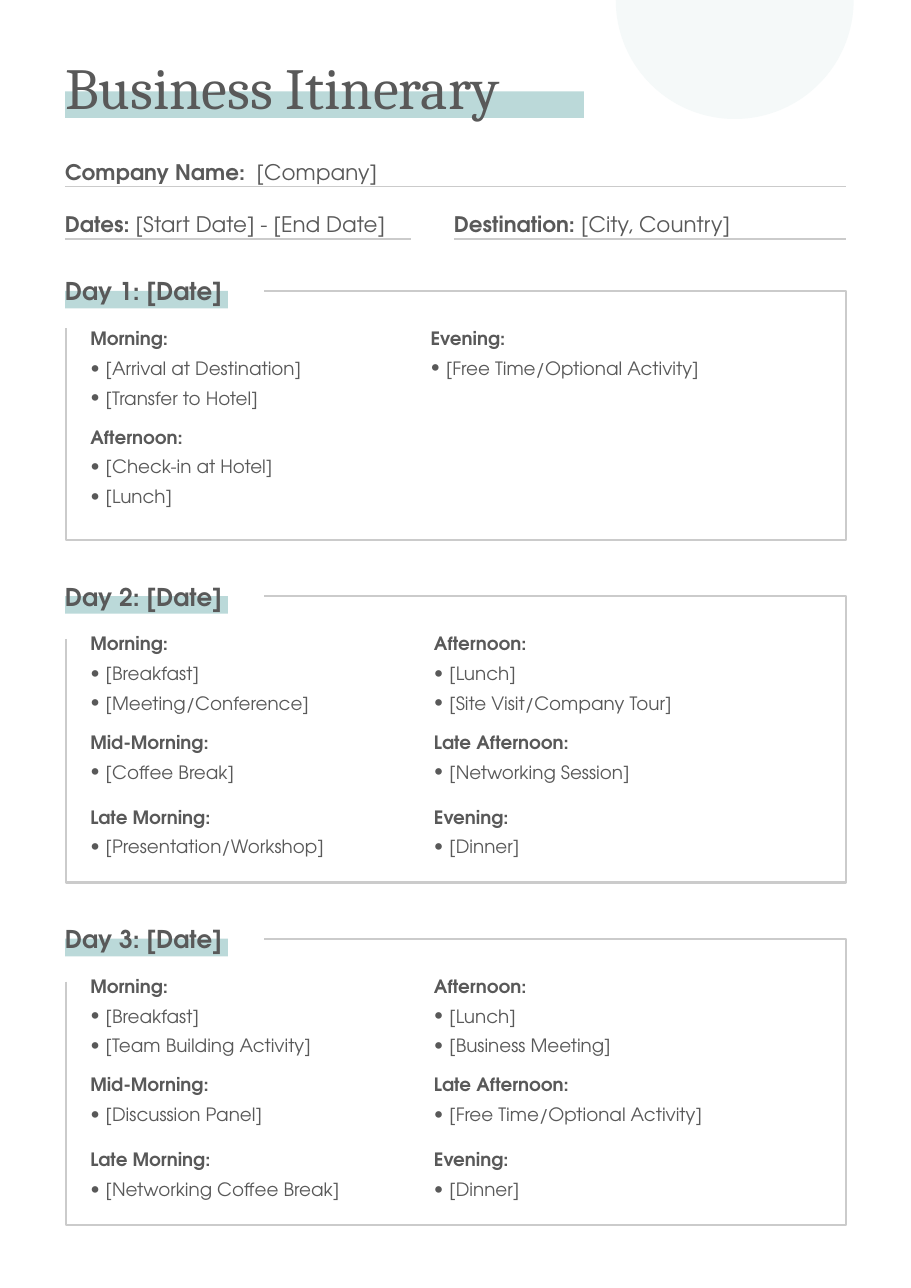
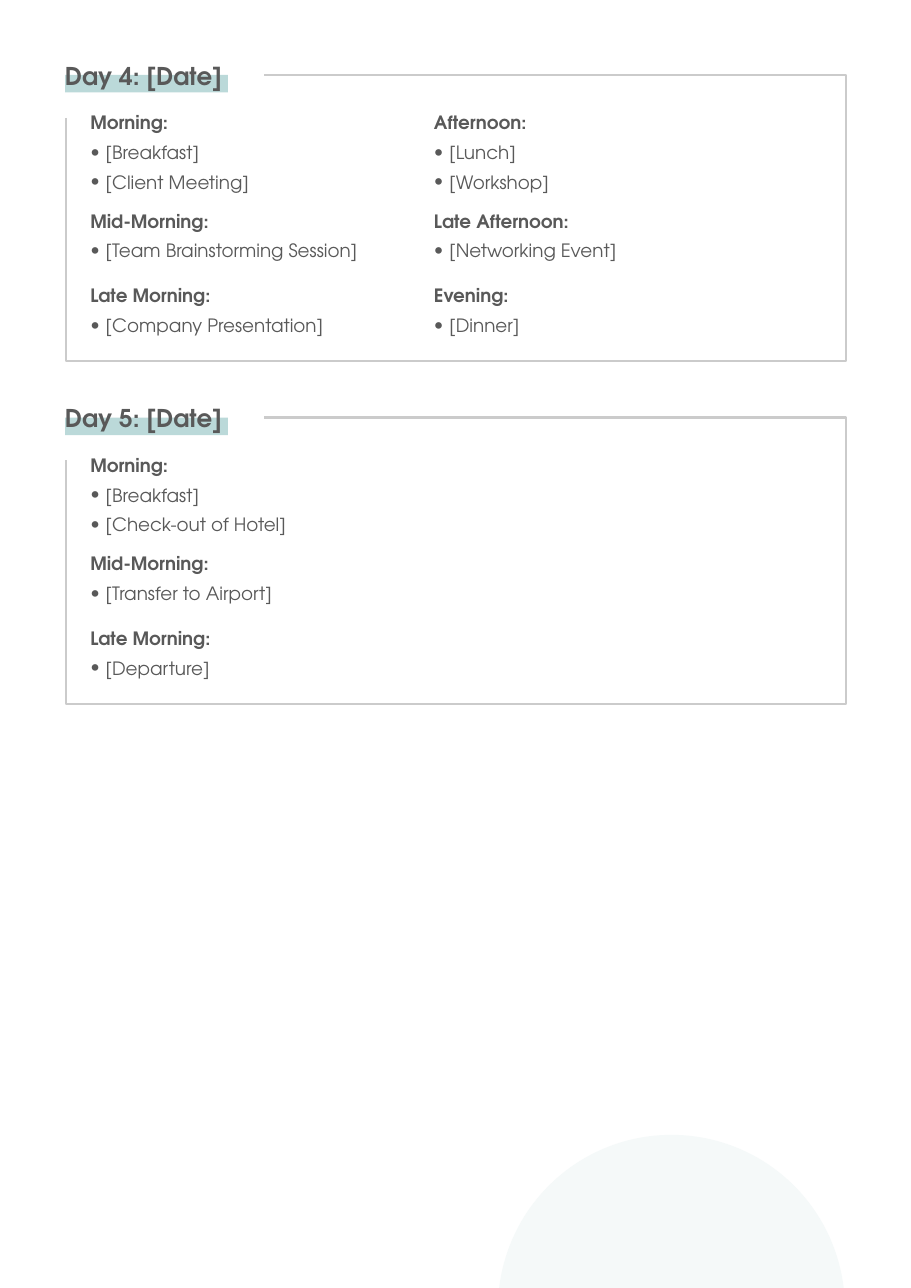
from dataclasses import dataclass

from lxml.etree import SubElement
from pptx import Presentation
from pptx.dml.color import RGBColor
from pptx.enum.shapes import MSO_CONNECTOR, MSO_SHAPE
from pptx.enum.text import MSO_AUTO_SIZE as AutoSize
from pptx.oxml.ns import qn
from pptx.util import Inches, Pt


@dataclass(frozen=True)
class Theme:
    ink: RGBColor = RGBColor.from_string("595959")
    band: RGBColor = RGBColor.from_string("BBD9D9")
    rule: RGBColor = RGBColor.from_string("CBCBCB")
    circle: RGBColor = RGBColor.from_string("F5F9F9")
    title_font: str = "Cambria"
    body_font: str = "TeX Gyre Adventor"
    title_size: int = 38
    field_size: int = 14
    day_size: int = 16
    body_size: int = 12


theme = Theme()

# Grid, in inches
LEFT, RIGHT = 0.59, 7.68
FRAME_LEFT, FRAME_START = 0.6, 2.4
FIRST_COLUMN, SECOND_COLUMN, COLUMN_WIDTH = 0.82, 3.94, 2.8
DAY_GAP = 0.51
LINE = 0.27
BULLET_INDENT = 0.14
GROUP_SPACE = [0, 6, 10]  # points above the first, second and third time of day


def add_text(shapes, left, top, width, height, lines, size, font=theme.body_font):
    """Add a text box; each line is a list of (text, bold) runs."""
    box = shapes.add_textbox(Inches(left), Inches(top), Inches(width), Inches(height))
    frame = box.text_frame
    frame.word_wrap = True
    frame.auto_size = AutoSize.SHAPE_TO_FIT_TEXT
    frame.margin_left = frame.margin_right = frame.margin_top = frame.margin_bottom = 0
    for number, runs in enumerate(lines):
        paragraph = frame.add_paragraph() if number else frame.paragraphs[0]
        for text, bold in runs:
            run = paragraph.add_run()
            run.text = text
            run.font.bold = bold
            run.font.name, run.font.size = font, Pt(size)
            run.font.color.rgb = theme.ink
    return frame.paragraphs


def add_filled(shapes, kind, left, top, width, height, color):
    shape = shapes.add_shape(kind, Inches(left), Inches(top), Inches(width), Inches(height))
    shape.shadow.inherit = False
    shape.fill.solid()
    shape.fill.fore_color.rgb = color
    shape.line.fill.background()
    return shape


# Content: per slide the first frame top, the half circle and the days;
# per day the frame height, the start of its left side and its columns
day_1 = (2.26, 0.34, [
    (FIRST_COLUMN, [
        ("Morning:", "[Arrival at Destination]", "[Transfer to Hotel]"),
        ("Afternoon:", "[Check-in at Hotel]", "[Lunch]")]),
    (3.91, [("Evening:", "[Free Time/Optional Activity]")])])
day_2 = (2.6, 0.39, [
    (FIRST_COLUMN, [
        ("Morning:", "[Breakfast]", "[Meeting/Conference]"),
        ("Mid-Morning:", "[Coffee Break]"),
        ("Late Morning:", "[Presentation/Workshop]")]),
    (SECOND_COLUMN, [
        ("Afternoon:", "[Lunch]", "[Site Visit/Company Tour]"),
        ("Late Afternoon:", "[Networking Session]"),
        ("Evening:", "[Dinner]")])])
day_3 = (2.6, 0.39, [
    (FIRST_COLUMN, [
        ("Morning:", "[Breakfast]", "[Team Building Activity]"),
        ("Mid-Morning:", "[Discussion Panel]"),
        ("Late Morning:", "[Networking Coffee Break]")]),
    (SECOND_COLUMN, [
        ("Afternoon:", "[Lunch]", "[Business Meeting]"),
        ("Late Afternoon:", "[Free Time/Optional Activity]"),
        ("Evening:", "[Dinner]")])])
day_4 = (2.6, 0.39, [
    (FIRST_COLUMN, [
        ("Morning:", "[Breakfast]", "[Client Meeting]"),
        ("Mid-Morning:", "[Team Brainstorming Session]"),
        ("Late Morning:", "[Company Presentation]")]),
    (SECOND_COLUMN, [
        ("Afternoon:", "[Lunch]", "[Workshop]"),
        ("Late Afternoon:", "[Networking Event]"),
        ("Evening:", "[Dinner]")])])
day_5 = (2.6, 0.39, [
    (FIRST_COLUMN, [
        ("Morning:", "[Breakfast]", "[Check-out of Hotel]"),
        ("Mid-Morning:", "[Transfer to Airport]"),
        ("Late Morning:", "[Departure]")])])
pages = [
    (2.64, (5.59, -1.08, 2.16, 0), [day_1, day_2, day_3]),
    (0.68, (4.52, 10.3, 3.15, 180), [day_4, day_5]),
]
# Label, value, left, top, right end of the rule
fields = [
    ("Company Name:\t", "[Company]", LEFT, 1.44, RIGHT),
    ("Dates: ", "[Start Date] - [End Date]", LEFT, 1.92, 3.73),
    ("Destination: ", "[City, Country]", 4.12, 1.92, RIGHT),
]

presentation = Presentation()
presentation.slide_width, presentation.slide_height = Inches(8.27), Inches(11.69)
day_number = 0

for page_number, (frame_top, half_circle, days) in enumerate(pages):
    slide = presentation.slides.add_slide(presentation.slide_layouts[6])

    # Half circle at the page edge
    left, top, diameter, rotation = half_circle
    pie = add_filled(slide.shapes, MSO_SHAPE.PIE, left, top, diameter, diameter, theme.circle)
    pie.adjustments[0], pie.adjustments[1] = 0, 108  # 180 degrees
    pie.rotation = rotation

    # Title and trip fields on the first page
    if page_number == 0:
        heading = slide.shapes.add_group_shape().shapes
        add_filled(heading, MSO_SHAPE.RECTANGLE, LEFT, 0.83, 4.71, 0.24, theme.band)
        add_text(heading, LEFT, 0.47, 5.49, 0.64, [[("Business Itinerary", False)]],
                 theme.title_size, theme.title_font)
        trip = slide.shapes.add_group_shape().shapes
        for label, value, left, top, right in fields:
            paragraphs = add_text(trip, left, top, right - left, 0.24,
                                  [[(label, True), (value, False)]], theme.field_size)
            if "\t" in label:
                tabs = SubElement(paragraphs[0]._p.get_or_add_pPr(), qn("a:tabLst"))
                SubElement(tabs, qn("a:tab"), pos=str(Inches(1.74)), algn="l")
            rule_top = Inches(top + 0.25)
            rule = trip.add_connector(MSO_CONNECTOR.STRAIGHT, Inches(left), rule_top,
                                      Inches(right), rule_top)
            rule.line.color.rgb, rule.line.width = theme.rule, Pt(0.75)
            SubElement(rule._element.spPr, qn("a:effectLst"))

    for height, side_start, columns in days:
        day_number += 1
        day = slide.shapes.add_group_shape().shapes

        # Open frame
        bottom = frame_top + height
        corners = [(FRAME_LEFT, bottom), (RIGHT, bottom), (RIGHT, frame_top),
                   (FRAME_START, frame_top)]
        builder = day.build_freeform(Inches(FRAME_LEFT), Inches(frame_top + side_start))
        builder.add_line_segments([(Inches(x), Inches(y)) for x, y in corners], close=False)
        frame = builder.convert_to_shape()
        frame.shadow.inherit = False
        frame.fill.background()
        frame.line.color.rgb, frame.line.width = theme.rule, Pt(1.5)

        # Day heading on its band
        add_filled(day, MSO_SHAPE.RECTANGLE, LEFT, frame_top, 1.48, 0.16, theme.band)
        add_text(day, LEFT, frame_top - 0.13, 1.77, 0.27,
                 [[(f"Day {day_number}: [Date]", True)]], theme.day_size)

        # Columns of times and activities
        for left, groups in columns:
            lines = [[(text, position == 0)] for group in groups
                     for position, text in enumerate(group)]
            spaces = [space if position == 0 else None
                      for space, group in zip(GROUP_SPACE, groups)
                      for position in range(len(group))]
            paragraphs = add_text(day, left, frame_top + 0.26, COLUMN_WIDTH,
                                  LINE * len(lines), lines, theme.body_size)
            for paragraph, space in zip(paragraphs, spaces):
                paragraph.line_spacing = Inches(LINE)
                if space is None:
                    properties = paragraph._p.get_or_add_pPr()
                    properties.set("marL", str(Inches(BULLET_INDENT)))
                    properties.set("indent", str(-Inches(BULLET_INDENT)))
                    SubElement(properties, qn("a:buFont"), typeface=theme.body_font)
                    SubElement(properties, qn("a:buChar"), char="•")
                elif space:
                    paragraph.space_before = Pt(space)

        frame_top = bottom + DAY_GAP

presentation.save("out.pptx")
